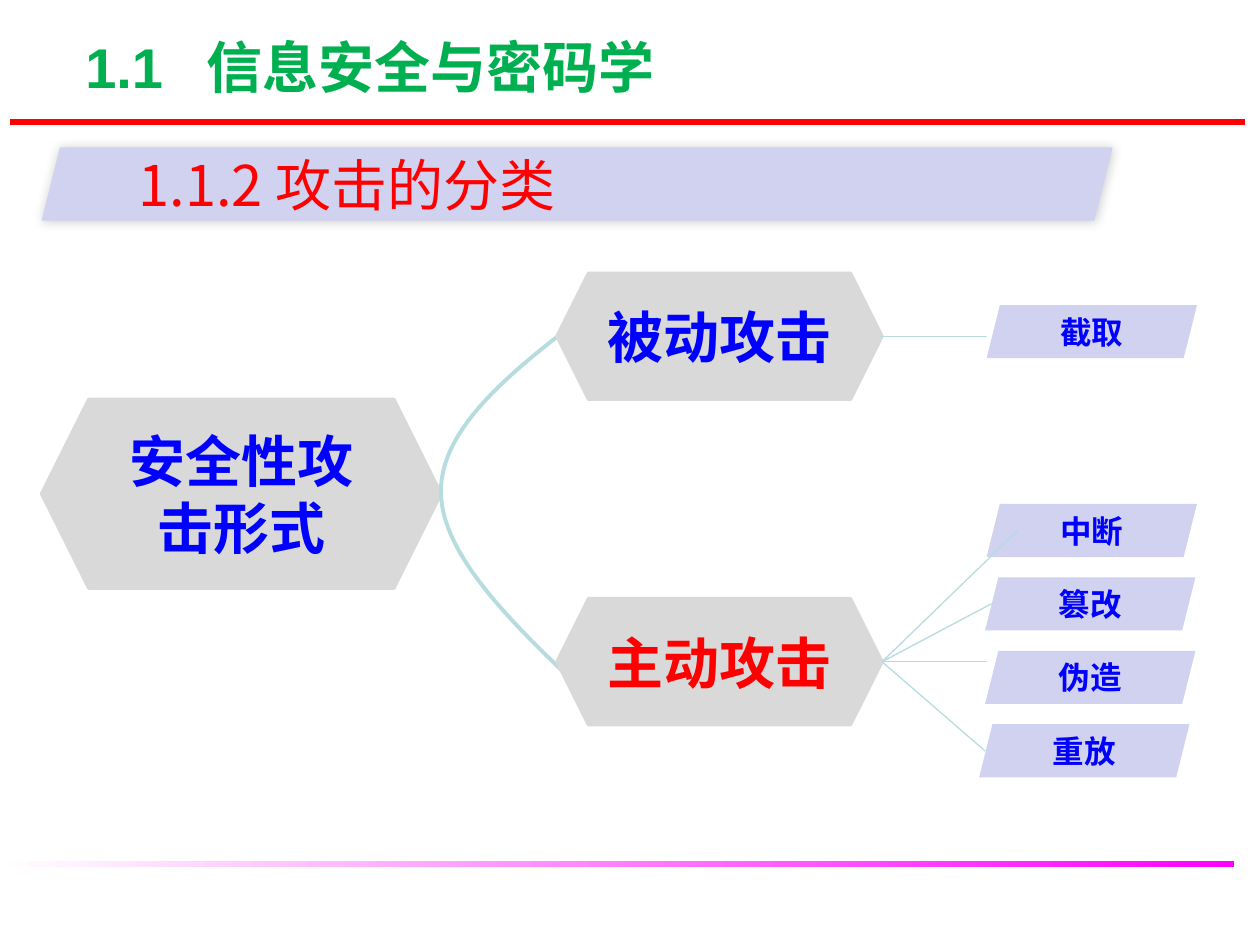
import lxml.etree
import pptx
import pptx.dml.color
import pptx.enum.shapes
import pptx.enum.text
import pptx.oxml.ns
import pptx.util

Cm = pptx.util.Cm
Pt = pptx.util.Pt
SHAPES = pptx.enum.shapes.MSO_SHAPE
ALIGN = pptx.enum.text.PP_ALIGN
qn = pptx.oxml.ns.qn

CJK = "Noto Sans CJK SC"
GREEN, RED, BLUE = "00B050", "FF0000", "0000FF"
LILAC, GREY, TEAL = "D1D1F0", "D9D9D9", "B6DCDF"
WHITE, MAGENTA = "FFFFFF", "FF00FF"


def rgb(value):
    return pptx.dml.color.RGBColor.from_string(value)


def write(frame, text, size, color, font="Arial", bold=True, align=ALIGN.CENTER):
    frame.word_wrap = True
    frame.vertical_anchor = pptx.enum.text.MSO_ANCHOR.MIDDLE
    paragraph = frame.paragraphs[0]
    paragraph.alignment = align
    run = paragraph.add_run()
    run.text = text
    run.font.size = Pt(size)
    run.font.name = font
    run.font.bold = bold
    run.font.color.rgb = rgb(color)
    east_asian = lxml.etree.Element(qn("a:ea"), typeface=CJK)
    run.font._element.find(qn("a:latin")).addnext(east_asian)
    return paragraph


def block(slide, kind, box, fill, line=None, width=2):
    shape = slide.shapes.add_shape(kind, *map(Cm, box))
    shape.shadow.inherit = False
    shape.fill.solid()
    shape.fill.fore_color.rgb = rgb(fill)
    if line:
        shape.line.color.rgb = rgb(line)
        shape.line.width = Pt(width)
    else:
        shape.line.fill.background()
    return shape


def link(slide, start, end):
    line = slide.shapes.add_connector(
        pptx.enum.shapes.MSO_CONNECTOR.STRAIGHT, *map(Cm, start + end))
    line.line.color.rgb = rgb(TEAL)
    line.line.width = Pt(0.75)
    lxml.etree.SubElement(line._element.spPr, qn("a:effectLst"))


def curve(slide, points):
    """Draw a cubic curve: a start, then two handles and an end per segment."""
    points = [(Cm(x), Cm(y)) for x, y in points]
    builder = slide.shapes.build_freeform(*points[0])
    builder.add_line_segments(points[1:], close=False)
    shape = builder.convert_to_shape()
    shape.shadow.inherit = False
    shape.fill.background()
    shape.line.color.rgb = rgb(TEAL)
    shape.line.width = Pt(2.25)
    # Join every three straight steps into one cubic segment
    outline = next(shape._element.iter(qn("a:path")))
    steps = outline.findall(qn("a:lnTo"))
    for first in range(0, len(steps), 3):
        cubic = lxml.etree.SubElement(outline, qn("a:cubicBezTo"))
        for step in steps[first:first + 3]:
            cubic.append(step[0])
            outline.remove(step)


def add_header(slide, left, top, width):
    # Red rule and chapter title
    block(slide, SHAPES.RECTANGLE, (left, top + 1.88, width, 0.15), RED, WHITE, 0.5)
    title = slide.shapes.add_textbox(
        *map(Cm, (left + 1.27, top, 22.02, 1.63))).text_frame
    title.auto_size = pptx.enum.text.MSO_AUTO_SIZE.SHAPE_TO_FIT_TEXT
    paragraph = write(title, "1.1\t信息安全与密码学", 32, GREEN, align=ALIGN.LEFT)
    # The tab stop sets the gap after the chapter number
    properties = paragraph._p.get_or_add_pPr()
    stops = lxml.etree.SubElement(properties, qn("a:tabLst"))
    lxml.etree.SubElement(stops, qn("a:tab"), pos=str(int(Cm(2.45))), algn="l")


def add_footer(slide, left, top, width):
    rule = block(slide, SHAPES.RECTANGLE, (left, top, width, 0.15), WHITE, WHITE, 1)
    rule.fill.gradient()
    rule.fill.gradient_angle = 0
    for stop, color in zip(rule.fill.gradient_stops, (WHITE, MAGENTA)):
        stop.color.rgb = rgb(color)


def add_section_banner(slide, box):
    banner = block(slide, SHAPES.PARALLELOGRAM, box, LILAC)
    banner.text_frame.margin_left = 0
    write(banner.text_frame, "1.1.2 攻击的分类", 32, RED, CJK, False, ALIGN.LEFT)
    # Soft shadow
    effects = banner._element.spPr.find(qn("a:effectLst"))
    shadow = lxml.etree.SubElement(
        effects, qn("a:outerShdw"), blurRad=str(int(Pt(6))), dist="0",
        dir="18900000", algn="ctr", rotWithShape="0")
    color = lxml.etree.SubElement(shadow, qn("a:srgbClr"), val="000000")
    lxml.etree.SubElement(color, qn("a:alpha"), val="20000")


def add_attack_tree(slide, left, top):
    def at(x, y):
        return left + x, top + y

    def hexagon(x, y, width, height, text, color=BLUE):
        shape = block(slide, SHAPES.HEXAGON, at(x, y) + (width, height), GREY, GREY)
        write(shape.text_frame, text, 32, color)

    def leaf(x, y, text):
        shape = block(slide, SHAPES.PARALLELOGRAM, at(x, y) + (4.24, 1.07), LILAC)
        write(shape.text_frame, text, 18, BLUE)

    # Root and the curve to its two branches
    hexagon(0, 2.54, 8.05, 3.81, "安全性攻击形式")
    curve(slide, [at(*point) for point in (
        (11.23, 0.64),
        (9.65, 1.83), (8.08, 3.02), (8.05, 4.35),
        (8.02, 5.69), (9.57, 7.14), (11.1, 8.59))])
    hexagon(10.39, 0, 6.55, 2.54, "被动攻击")
    hexagon(10.39, 6.56, 6.55, 2.54, "主动攻击", RED)

    # Passive attack
    link(slide, at(16.9, 1.27), at(19.05, 1.27))
    leaf(19.05, 0.64, "截取")

    # Active attacks, evenly stepped, with links on top
    active = ((19.05, "中断"), (19.02, "篡改"), (19.02, "伪造"), (18.9, "重放"))
    for row, (x, text) in enumerate(active):
        leaf(x, 4.65 + 1.48 * row, text)
    for end in ((19.68, 5.18), (19.05, 7.83), (19.15, 6.66), (19.02, 9.63)):
        link(slide, at(16.94, 7.83), at(*end))


def main():
    deck = pptx.Presentation()
    deck.slide_width, deck.slide_height = Cm(25.4), Cm(19.05)
    slide = deck.slides.add_slide(deck.slide_layouts[6])
    add_header(slide, 0.2, 0.51, 24.9)
    add_footer(slide, 0, 17.35, 24.9)
    add_section_banner(slide, (0.84, 2.97, 21.59, 1.48))
    add_attack_tree(slide, 0.84, 5.51)
    deck.save("out.pptx")


if __name__ == "__main__":
    main()
